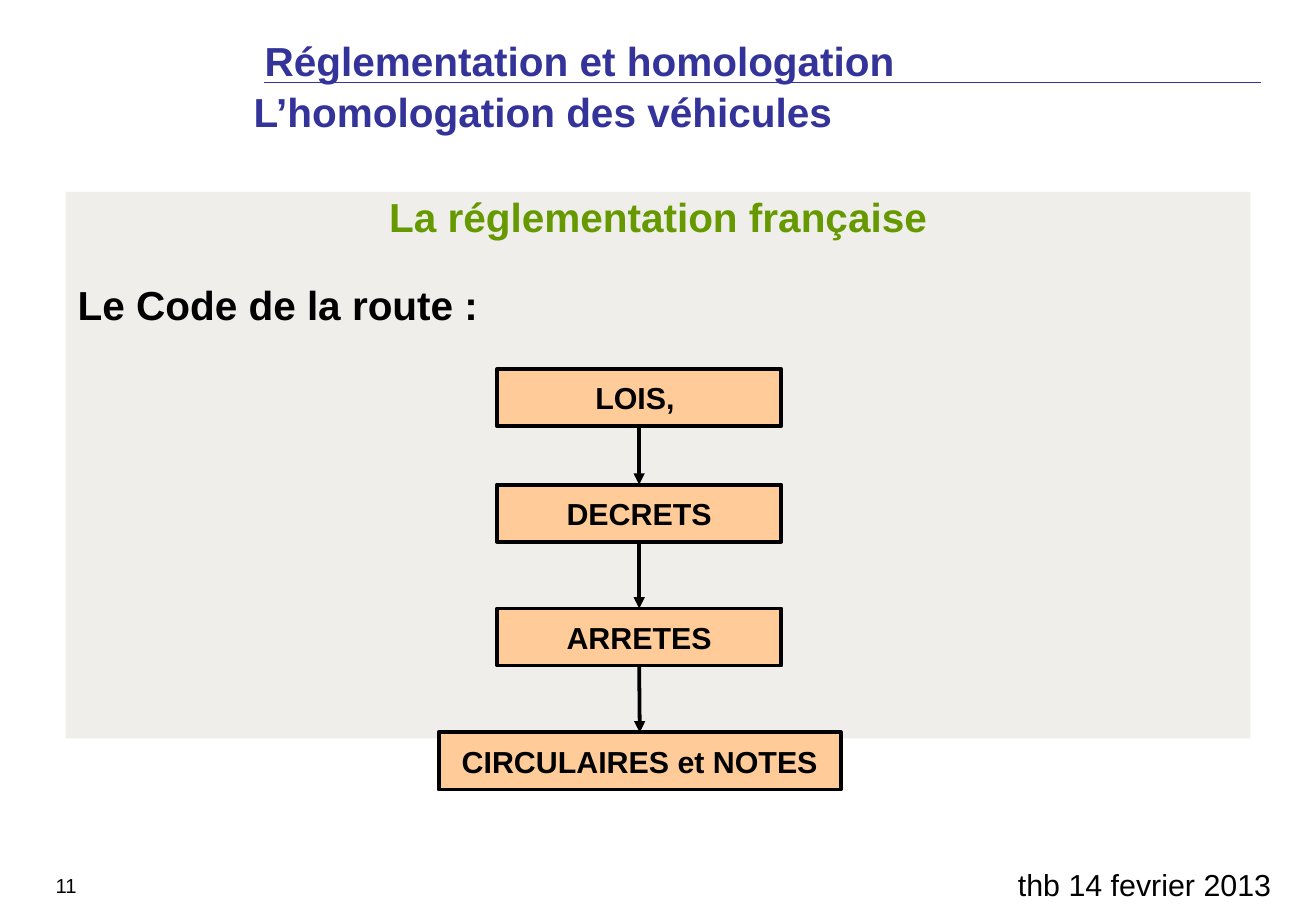
import pptx
import pptx.dml.color
import pptx.enum.shapes
import pptx.enum.text
import pptx.oxml.ns
import pptx.util
from itertools import pairwise
from lxml import etree

PX = 9144
FONT = "Arial"
COLORS = {
    "navy": "333399",
    "green": "669900",
    "black": "000000",
    "panel": "E1DED7",
    "peach": "FFCC99",
}
ALIGN = pptx.enum.text.PP_ALIGN
ANCHOR = pptx.enum.text.MSO_ANCHOR
SHAPES = pptx.enum.shapes.MSO_SHAPE
CONNECTORS = pptx.enum.shapes.MSO_CONNECTOR
CHAIN_CENTER = 526
BOX_HEIGHT = 47
LEVELS = [
    ("LOIS, ", 304, 234),
    ("DECRETS", 399, 234),
    ("ARRETES", 501, 234),
    ("CIRCULAIRES et NOTES", 603, 331),
]


def px(*lengths):
    """Turn pixel lengths into EMU."""
    return [pptx.util.Emu(length * PX) for length in lengths]


def rgb(color):
    """Look up a named colour."""
    return pptx.dml.color.RGBColor.from_string(COLORS[color])


def add_element(parent, tag, **attributes):
    """Append a DrawingML element."""
    return etree.SubElement(parent, pptx.oxml.ns.qn(tag), attributes)


def write(paragraph, text, size, color, bold=False, align=ALIGN.LEFT):
    """Add one formatted run to a paragraph."""
    paragraph.alignment = align
    run = paragraph.add_run()
    run.text = text
    run.font.name = FONT
    run.font.size = pptx.util.Pt(size)
    run.font.bold = bold
    run.font.color.rgb = rgb(color)


def add_label(slide, area, text, size, color, bold=False, align=ALIGN.LEFT):
    """Add a single-line text box."""
    label = slide.shapes.add_textbox(*px(*area))
    label.text_frame.word_wrap = True
    write(label.text_frame.paragraphs[0], text, size, color, bold, align)


def add_rectangle(slide, area, fill, anchor):
    """Add a filled rectangle without outline."""
    rectangle = slide.shapes.add_shape(SHAPES.RECTANGLE, *px(*area))
    rectangle.shadow.inherit = False
    rectangle.fill.solid()
    rectangle.fill.fore_color.rgb = rgb(fill)
    rectangle.line.fill.background()
    rectangle.text_frame.vertical_anchor = anchor
    return rectangle


def add_panel(slide):
    """Add the half-transparent panel with its two headings."""
    panel = add_rectangle(slide, (54, 158, 975, 450), "panel", ANCHOR.TOP)
    tint = panel.fill._xPr.find(".//" + pptx.oxml.ns.qn("a:srgbClr"))
    add_element(tint, "a:alpha", val="50000")
    frame = panel.text_frame
    frame.word_wrap = True
    heading, topic = frame.paragraphs[0], frame.add_paragraph()
    heading.line_spacing = topic.line_spacing = 0.9
    topic.space_before = pptx.util.Pt(26)
    write(heading, "La réglementation française", 24, "green", True, ALIGN.CENTER)
    write(topic, "Le Code de la route :", 24, "black", True)


def add_level(slide, text, top, width):
    """Add one level of the legal hierarchy."""
    area = (CHAIN_CENTER - width // 2, top, width, BOX_HEIGHT)
    level = add_rectangle(slide, area, "peach", ANCHOR.MIDDLE)
    level.line.color.rgb = rgb("black")
    level.line.width = pptx.util.Pt(2.25)
    level.text_frame.word_wrap = False
    write(level.text_frame.paragraphs[0], text, 18, "black", True, ALIGN.CENTER)
    return level


def add_line(slide, ends, color, width):
    """Add a straight line without shadow."""
    line = slide.shapes.add_connector(CONNECTORS.STRAIGHT, *px(*ends))
    line.line.color.rgb = rgb(color)
    line.line.width = pptx.util.Pt(width)
    add_element(line._element.spPr, "a:effectLst")
    return line


def add_arrow(slide, upper, lower):
    """Join two levels with an arrow pointing down."""
    arrow = add_line(slide, (0, 0, 0, 0), "black", 2.25)
    arrow.begin_connect(upper, 2)
    arrow.end_connect(lower, 0)
    add_element(arrow.line._get_or_add_ln(), "a:tailEnd", type="triangle")


def main():
    """Build and save the slide."""
    deck = pptx.Presentation()
    deck.slide_width, deck.slide_height = px(1083, 750)
    slide = deck.slides.add_slide(deck.slide_layouts[6])

    add_line(slide, (217, 68, 1038, 68), "navy", 1)
    add_label(slide, (208, 25, 837, 50), "Réglementation et homologation", 24, "navy", True)
    add_label(slide, (370, 708, 686, 18), "thb 14 fevrier 2013", 18, "black", align=ALIGN.RIGHT)
    add_label(slide, (6, 714, 67, 21), "11", 12, "black", align=ALIGN.RIGHT)
    add_panel(slide)
    add_label(slide, (199, 67, 657, 50), "L’homologation des véhicules", 24, "navy", True)

    levels = [add_level(slide, *level) for level in LEVELS]
    for upper, lower in pairwise(levels):
        add_arrow(slide, upper, lower)

    deck.save("out.pptx")


if __name__ == "__main__":
    main()
